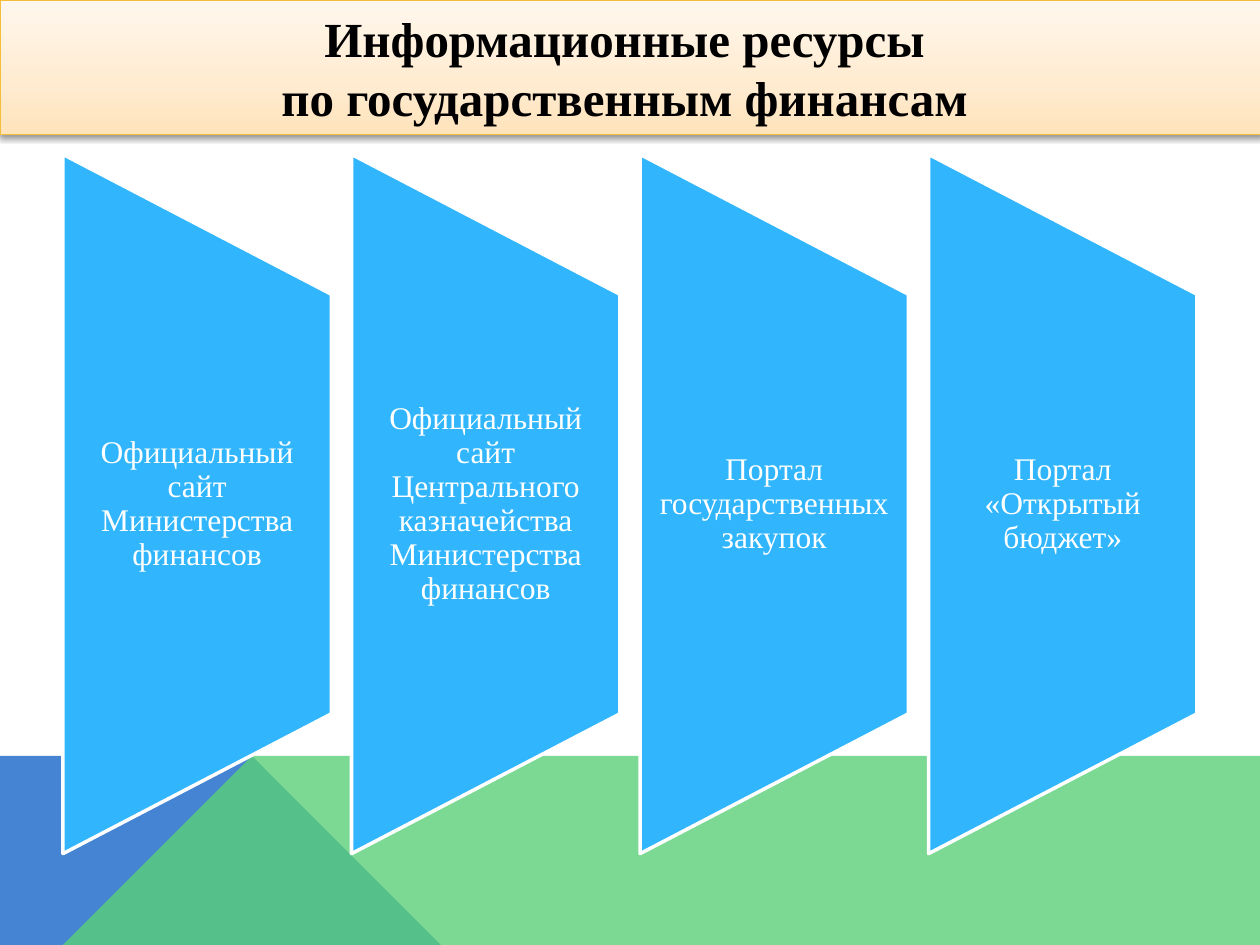
import copy
from dataclasses import dataclass

import lxml.etree
import pptx
import pptx.dml.color
import pptx.enum.shapes
import pptx.enum.text
import pptx.oxml
import pptx.oxml.ns
import pptx.util

Inches = pptx.util.Inches
Pt = pptx.util.Pt
RGBColor = pptx.dml.color.RGBColor
qn = pptx.oxml.ns.qn

WHITE = RGBColor(0xFF, 0xFF, 0xFF)
BLACK = RGBColor(0x00, 0x00, 0x00)
SKY = RGBColor(0x31, 0xB6, 0xFD)
BLUE = RGBColor(0x45, 0x84, 0xD3)
GREEN = RGBColor(0x5B, 0xD0, 0x78)
GOLD = RGBColor(0xF4, 0xBE, 0x3A)
PEACH = RGBColor(0xFF, 0xE3, 0xBB)
APRICOT = RGBColor(0xFF, 0xEB, 0xCF)
CREAM = RGBColor(0xFF, 0xF7, 0xED)

PANEL_LEFT = 0.5
PANEL_STEP = 2.29
PANEL_WIDTH = 2.13
PANEL_HEIGHT = 5.55
PANEL_MIDDLE = 4.0
LABEL_HEIGHT = 3.33


@dataclass
class Backdrop:
    points: list[tuple[float, float]]
    color: RGBColor
    opacity: int


BACKDROPS = [
    Backdrop([(0, 7.5), (0, 5.52), (2.23, 5.52), (3.91, 7.5)], BLUE, 100),
    Backdrop([(0, 7.5), (2.23, 5.52), (10, 5.53), (10, 7.5)], GREEN, 80),
]

RESOURCES = [
    "Официальный сайт Министерства финансов",
    "Официальный сайт Центрального казначейства Министерства финансов",
    "Портал государственных закупок",
    "Портал «Открытый бюджет»",
]


def write_text(box, lines: list[str], *, size: float, color: RGBColor, bold: bool = False,
               spacing: float = 1.0, side_inset: float = 0, end_inset: float = 0) -> None:
    frame = box.text_frame
    frame.word_wrap = True
    frame.auto_size = pptx.enum.text.MSO_AUTO_SIZE.NONE
    frame.vertical_anchor = pptx.enum.text.MSO_ANCHOR.MIDDLE
    frame.margin_left = frame.margin_right = Inches(side_inset)
    frame.margin_top = frame.margin_bottom = Inches(end_inset)
    for index, line in enumerate(lines):
        para = frame.add_paragraph() if index else frame.paragraphs[0]
        para.alignment = pptx.enum.text.PP_ALIGN.CENTER
        para.line_spacing = spacing
        span = para.add_run()
        span.text = line
        span.font.name = "Times New Roman"
        span.font.size = Pt(size)
        span.font.bold = bold
        span.font.color.rgb = color


def draw_backdrop(page, backdrop: Backdrop) -> None:
    start, *others = backdrop.points
    builder = page.shapes.build_freeform(*start, scale=Inches(1))
    builder.add_line_segments(others, close=True)
    shape = builder.convert_to_shape()
    shape.shadow.inherit = False
    shape.line.fill.background()
    shape.fill.solid()
    shape.fill.fore_color.rgb = backdrop.color
    if backdrop.opacity < 100:
        color = shape.element.spPr.find(f"{qn('a:solidFill')}/{qn('a:srgbClr')}")
        lxml.etree.SubElement(color, qn("a:alpha"), val=str(backdrop.opacity * 1000))


def draw_panel(page, left: float, label: str) -> None:
    panel = page.shapes.add_shape(
        pptx.enum.shapes.MSO_SHAPE.FLOWCHART_MANUAL_OPERATION,
        Inches(left + (PANEL_WIDTH - PANEL_HEIGHT) / 2),
        Inches(PANEL_MIDDLE - PANEL_WIDTH / 2),
        Inches(PANEL_HEIGHT), Inches(PANEL_WIDTH))
    panel.rotation = 270
    panel.shadow.inherit = False
    panel.fill.solid()
    panel.fill.fore_color.rgb = SKY
    panel.line.color.rgb = WHITE
    panel.line.width = Pt(2)
    box = page.shapes.add_textbox(
        Inches(left), Inches(PANEL_MIDDLE - LABEL_HEIGHT / 2),
        Inches(PANEL_WIDTH), Inches(LABEL_HEIGHT))
    write_text(box, [label], size=18, color=WHITE, spacing=0.9, side_inset=0.12)


def format_title(title) -> None:
    title.left, title.top = Inches(0), Inches(0)
    title.width, title.height = Inches(10.01), Inches(1.07)
    title.fill.gradient()
    title.fill.gradient_angle = 90
    stop_list = title.element.spPr.find(f"{qn('a:gradFill')}/{qn('a:gsLst')}")
    stop_list.insert(1, copy.deepcopy(stop_list[0]))
    for stop, position, color in zip(title.fill.gradient_stops, (0, 0.35, 1),
                                     (PEACH, APRICOT, CREAM)):
        stop.position = position
        stop.color.rgb = color
    title.line.color.rgb = GOLD
    title.line.width = Pt(0.75)
    effects = lxml.etree.SubElement(title.element.spPr, qn("a:effectLst"))
    shadow = lxml.etree.SubElement(
        effects, qn("a:outerShdw"), blurRad=str(Pt(3.1)), dist=str(Pt(1.6)),
        dir="5400000", rotWithShape="0")
    color = lxml.etree.SubElement(shadow, qn("a:srgbClr"), val=str(BLACK))
    lxml.etree.SubElement(color, qn("a:alpha"), val="38000")
    write_text(title, ["Информационные ресурсы ", "по государственным финансам "],
               size=28, color=BLACK, bold=True, end_inset=0.05)


def main() -> None:
    deck = pptx.Presentation()
    deck.slide_width, deck.slide_height = Inches(10), Inches(7.5)
    page = deck.slides.add_slide(deck.slide_layouts[5])
    page.background.fill.solid()
    page.background.fill.fore_color.rgb = WHITE
    format_title(page.shapes.title)
    for backdrop in BACKDROPS:
        draw_backdrop(page, backdrop)
    for index, label in enumerate(RESOURCES):
        draw_panel(page, PANEL_LEFT + index * PANEL_STEP, label)
    deck.save("out.pptx")


if __name__ == "__main__":
    main()
